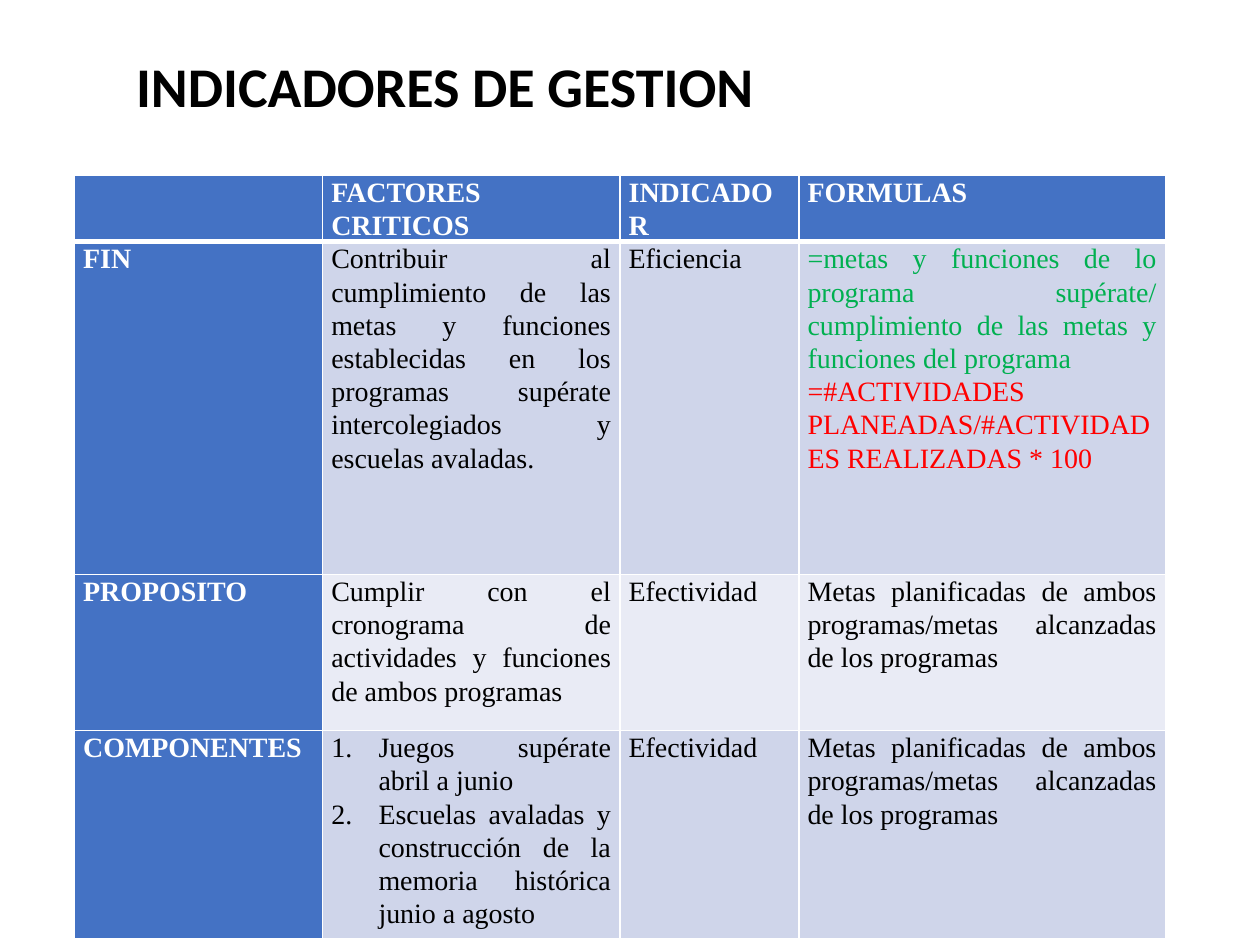
"""Build the management indicators slide."""
import dataclasses

import lxml.etree
import pptx
import pptx.dml.color
import pptx.enum.text
import pptx.oxml.ns
import pptx.util


@dataclasses.dataclass(frozen=True)
class Theme:
    """Colours, fonts and sizes of the deck."""
    white: str = "FFFFFF"
    black: str = "000000"
    blue: str = "4472C4"
    bands: tuple = ("CFD5EA", "E9EBF5")
    green: str = "00B050"
    red: str = "FF0000"
    title_font: str = "Calibri"
    table_font: str = "Times New Roman"
    title_size: int = 32
    table_size: int = 16
    line_spacing: float = 1.07
    thin: int = 1
    thick: int = 3


@dataclasses.dataclass(frozen=True)
class Line:
    """One paragraph of a table cell."""
    text: str
    color: str = Theme.black
    numbered: bool = False


class SlideBuilder:
    """Draw elements on a grid of 100 columns by 75 rows."""

    def __init__(self, deck, theme):
        """Add a title-only slide to the deck."""
        self.theme = theme
        self.unit = deck.slide_width / 100
        self.slide = deck.slides.add_slide(deck.slide_layouts[5])

    def grid(self, *lengths):
        """Turn grid units into slide lengths."""
        return [pptx.util.Emu(round(length * self.unit)) for length in lengths]

    def span(self, para, text, font, size, color, bold):
        """Add one formatted run."""
        span = para.add_run()
        span.text = text
        span.font.name = font
        span.font.size = pptx.util.Pt(size)
        span.font.bold = bold
        span.font.color.rgb = pptx.dml.color.RGBColor.from_string(color)

    def title(self, text, *place):
        """Place and fill the title placeholder."""
        box = self.slide.shapes.title
        box.left, box.top, box.width, box.height = self.grid(*place)
        frame = box.text_frame
        frame.word_wrap = True
        frame.auto_size = pptx.enum.text.MSO_AUTO_SIZE.NONE
        frame.vertical_anchor = pptx.enum.text.MSO_ANCHOR.TOP
        para = frame.paragraphs[0]
        para.alignment = pptx.enum.text.PP_ALIGN.LEFT
        para.line_spacing = 1.0
        self.span(para, text, self.theme.title_font, self.theme.title_size,
                  self.theme.black, True)

    def borders(self, cell, top, bottom):
        """Draw white borders round a cell."""
        properties = cell._tc.get_or_add_tcPr()
        thin = self.theme.thin
        for side, width in zip("LRTB", (thin, thin, top, bottom)):
            line = lxml.etree.SubElement(
                properties, pptx.oxml.ns.qn(f"a:ln{side}"), w=str(pptx.util.Pt(width)))
            fill = lxml.etree.SubElement(line, pptx.oxml.ns.qn("a:solidFill"))
            lxml.etree.SubElement(
                fill, pptx.oxml.ns.qn("a:srgbClr"), val=self.theme.white)

    def number(self, para):
        """Number a paragraph with a hanging indent."""
        properties = para._p.get_or_add_pPr()
        indent = self.grid(3.75)[0]
        properties.set("marL", str(indent))
        properties.set("indent", str(-indent))
        lxml.etree.SubElement(
            properties, pptx.oxml.ns.qn("a:buAutoNum"), type="arabicPeriod")

    def cell(self, cell, lines, fill, bold):
        """Fill one cell with colour and justified text."""
        theme = self.theme
        cell.margin_left, cell.margin_right = self.grid(0.7, 0.7)
        cell.margin_top = cell.margin_bottom = 0
        cell.fill.solid()
        cell.fill.fore_color.rgb = pptx.dml.color.RGBColor.from_string(fill)
        for index, line in enumerate(lines):
            frame = cell.text_frame
            para = frame.add_paragraph() if index else frame.paragraphs[0]
            para.alignment = pptx.enum.text.PP_ALIGN.JUSTIFY
            para.line_spacing = theme.line_spacing
            if line.numbered:
                self.number(para)
            para.font.size = pptx.util.Pt(theme.table_size)
            if line.text:
                self.span(para, line.text, theme.table_font, theme.table_size,
                          theme.white if bold else line.color, bold)

    def table(self, left, top, widths, heights, rows):
        """Draw a table with a header row and a header column."""
        theme = self.theme
        place = self.grid(left, top, sum(widths), sum(heights))
        table = self.slide.shapes.add_table(len(rows), len(widths), *place).table
        table.horz_banding = False
        for column, width in zip(table.columns, self.grid(*widths)):
            column.width = width
        for row, height in zip(table.rows, self.grid(*heights)):
            row.height = height
        for i, row in enumerate(rows):
            for j, lines in enumerate(row):
                header = i == 0 or j == 0
                cell = table.cell(i, j)
                self.borders(cell, theme.thick if i == 1 else theme.thin,
                             theme.thick if i == 0 else theme.thin)
                fill = theme.blue if header else theme.bands[(i - 1) % 2]
                self.cell(cell, lines, fill, header)


def main():
    """Build and save the deck."""
    theme = Theme()
    deck = pptx.Presentation()
    deck.slide_width = pptx.util.Inches(10)
    deck.slide_height = pptx.util.Inches(7.5)
    page = SlideBuilder(deck, theme)
    page.title("INDICADORES DE GESTION", 9.8, 3.6, 61.4, 6.4)
    goals = [Line("Metas planificadas de ambos programas/metas alcanzadas de los programas")]
    effectiveness = [Line("Efectividad")]
    rows = [
        [[Line(text)] for text in ("", "FACTORES CRITICOS", "INDICADOR", "FORMULAS")],
        [[Line("FIN")],
         [Line("Contribuir al cumplimiento de las metas y funciones establecidas "
               "en los programas supérate intercolegiados y escuelas avaladas.")],
         [Line("Eficiencia")],
         [Line("=metas y funciones de lo programa supérate/ cumplimiento de las "
               "metas y funciones del programa", theme.green),
          Line("=#ACTIVIDADES PLANEADAS/#ACTIVIDADES REALIZADAS * 100", theme.red)]],
        [[Line("PROPOSITO")],
         [Line("Cumplir con el cronograma de actividades y funciones de ambos programas")],
         effectiveness, goals],
        [[Line("COMPONENTES")],
         [Line("Juegos supérate abril a junio", numbered=True),
          Line("Escuelas avaladas y construcción de la memoria histórica junio a agosto",
               numbered=True)],
         effectiveness, goals],
    ]
    page.table(5.9, 13.9, (19.7, 23.6, 14.2, 29.1), (5.2, 26.4, 12.4, 16.5), rows)
    deck.save("out.pptx")


if __name__ == "__main__":
    main()
